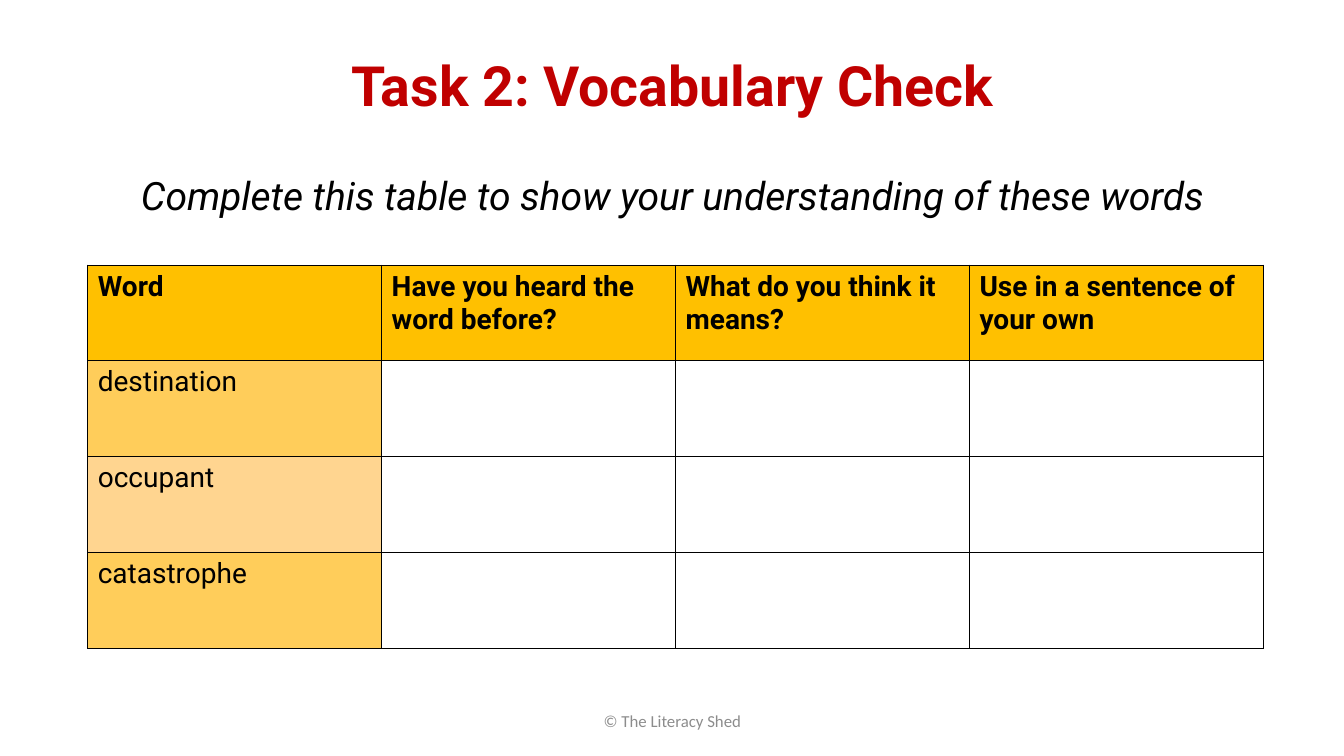
from pptx import Presentation
from pptx.dml.color import RGBColor
from pptx.enum.text import MSO_ANCHOR, PP_ALIGN
from pptx.oxml.ns import qn
from pptx.util import Inches, Pt
from lxml import etree

CENTER, LEFT = PP_ALIGN.CENTER, PP_ALIGN.LEFT
MIDDLE = MSO_ANCHOR.MIDDLE

TITLE = "Task 2: Vocabulary Check"
INSTRUCTION = "Complete this table to show your understanding of these words"
FOOTER = "© The Literacy Shed"
HEADERS = ["Word", "Have you heard the word before?",
           "What do you think it means?", "Use in a sentence of your own"]
WORDS = ["destination", "occupant", "catastrophe"]

THEME = {
    "font": "Roboto", "footer_font": "Calibri",
    "red": "C00000", "black": "000000", "grey": "8C8C8C", "white": "FFFFFF",
    "header": "FFC000", "bands": ["FFCD5A", "FFD590"],
    "title": 39.6, "instruction": 27.9, "cell": 20, "footer": 12, "border": 1,
}
TITLE_BOX = (0.92, 0.65, 11.5, 1.45)
FOOTER_BOX = (4.42, 6.95, 4.5, 0.4)
TABLE_LEFT, TABLE_TOP = 0.87, 2.63
COL_WIDTH, ROW_HEIGHT = 2.915, 0.95


def write(p, text, size, color="black", font="font", bold=False, italic=False,
          align=LEFT, spacing=None, before=0):
    p.alignment = align
    p.space_before = Pt(before)
    if spacing:
        p.line_spacing = spacing
    r = p.add_run()
    r.text = text
    r.font.name = THEME[font]
    r.font.size = Pt(THEME[size])
    r.font.bold, r.font.italic = bold, italic
    r.font.color.rgb = RGBColor.from_string(THEME[color])


def add_text_frame(s, box):
    tf = s.shapes.add_textbox(*map(Inches, box)).text_frame
    tf.word_wrap = True
    tf.vertical_anchor = MIDDLE
    return tf


def style_cell(cell, fill):
    """Give the cell a border on every side and a solid fill."""
    tcPr = cell._tc.get_or_add_tcPr()
    for side in ("lnL", "lnR", "lnT", "lnB"):
        ln = etree.SubElement(tcPr, qn(f"a:{side}"), w=str(Pt(THEME["border"])))
        solid = etree.SubElement(ln, qn("a:solidFill"))
        etree.SubElement(solid, qn("a:srgbClr"), val=THEME["black"])
    cell.fill.solid()
    cell.fill.fore_color.rgb = RGBColor.from_string(fill)


def add_word_table(s):
    rows = [HEADERS] + [[word] + [""] * (len(HEADERS) - 1) for word in WORDS]
    n_rows, n_cols = len(rows), len(HEADERS)
    table = s.shapes.add_table(
        n_rows, n_cols, Inches(TABLE_LEFT), Inches(TABLE_TOP),
        Inches(COL_WIDTH * n_cols), Inches(ROW_HEIGHT * n_rows)).table
    for i, row in enumerate(rows):
        for j, text in enumerate(row):
            if i == 0:
                fill = THEME["header"]
            elif j == 0:
                fill = THEME["bands"][(i - 1) % 2]
            else:
                fill = THEME["white"]
            cell = table.cell(i, j)
            style_cell(cell, fill)
            if text:
                write(cell.text_frame.paragraphs[0], text, "cell", bold=i == 0)


def main():
    prs = Presentation()
    prs.slide_width, prs.slide_height = Inches(13.33), Inches(7.5)
    s = prs.slides.add_slide(prs.slide_layouts[6])

    tf = add_text_frame(s, TITLE_BOX)
    write(tf.paragraphs[0], TITLE, "title", color="red", bold=True,
          align=CENTER, spacing=0.9)
    write(tf.add_paragraph(), INSTRUCTION, "instruction", italic=True,
          align=CENTER, spacing=0.9, before=42)

    tf = add_text_frame(s, FOOTER_BOX)
    write(tf.paragraphs[0], FOOTER, "footer", color="grey",
          font="footer_font", align=CENTER)

    add_word_table(s)
    prs.save("out.pptx")


if __name__ == "__main__":
    main()
